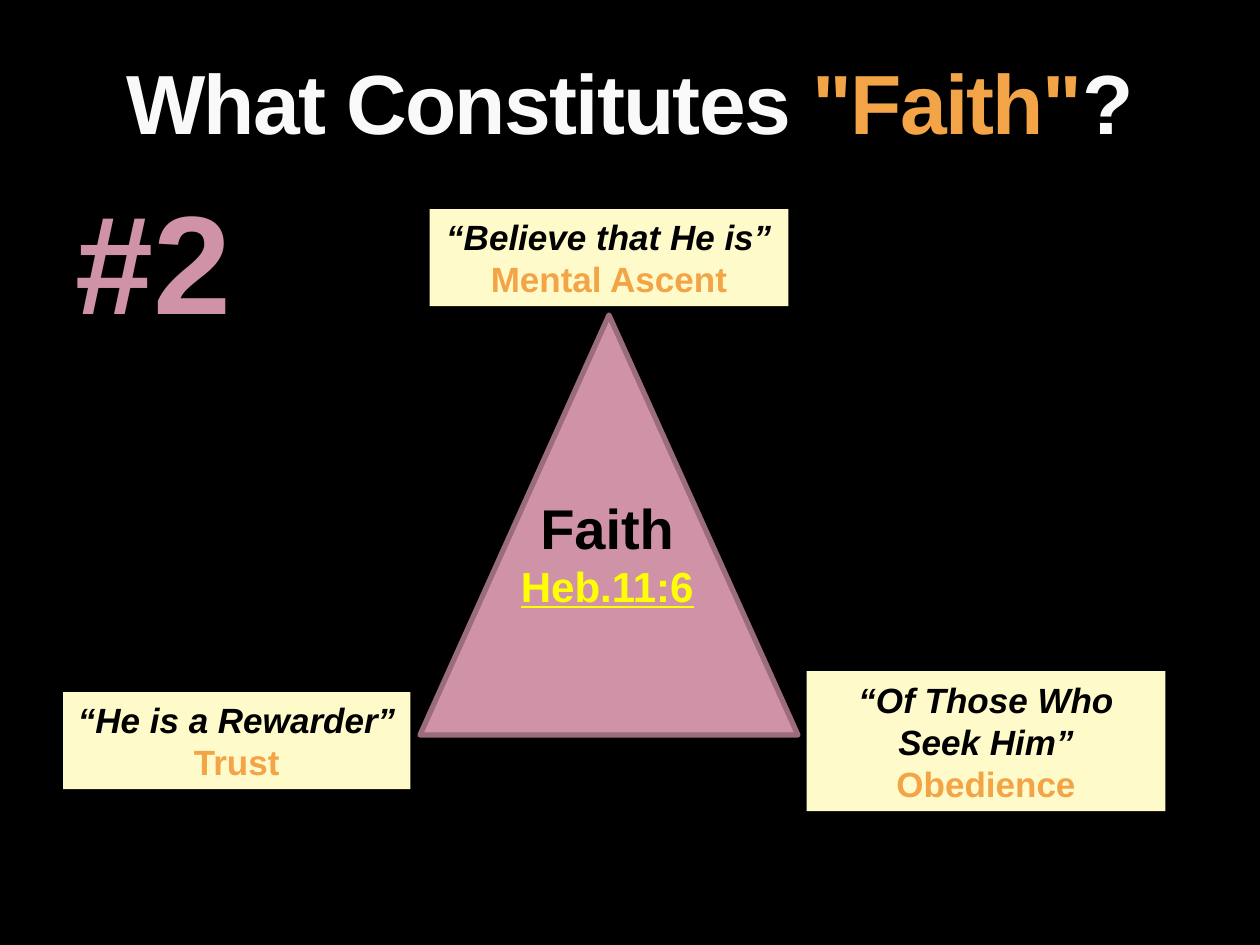
"""Build the slide on the three parts of faith around a triangle."""
from lxml.etree import SubElement
from pptx import Presentation
from pptx.dml.color import RGBColor
from pptx.enum.shapes import MSO_SHAPE
from pptx.enum.text import MSO_ANCHOR, MSO_AUTO_SIZE, PP_ALIGN
from pptx.oxml.ns import qn
from pptx.util import Pt

COLORS = {
    "background": "000000",
    "title": "F9F9F9",
    "accent": "F3A447",
    "rose": "D092A7",
    "rose_edge": "9A6C7C",
    "cream": "FEFAC9",
    "dark": "000000",
    "reference": "FFFF00",
}
BASE_FONT = {"name": "Arial", "bold": True}
QUOTE = {"size": Pt(20), "italic": True}
MEANING = {"size": Pt(20), "italic": False}
CORNERS = [
    ("“Believe that He is”", "Mental Ascent", (245.5, 119.5, 205, 55.5)),
    ("“He is a Rewarder”", "Trust", (36, 395.5, 198.5, 55.5)),
    ("“Of Those Who Seek Him”", "Obedience", (461, 383.5, 205, 80)),
]


def color(name):
    return RGBColor.from_string(COLORS[name])


def set_values(target, values):
    for attribute, value in values.items():
        setattr(target, attribute, value)


def place(shape, left, top, width, height):
    position = {"left": left, "top": top, "width": width, "height": height}
    set_values(shape, {side: Pt(length) for side, length in position.items()})


def add_run(paragraph, text, color_name, values):
    run = paragraph.add_run()
    run.text = text
    set_values(run.font, BASE_FONT | values)
    run.font.color.rgb = color(color_name)
    return run


def write_lines(text_frame, lines):
    for index, line in enumerate(lines):
        paragraph = text_frame.add_paragraph() if index else text_frame.paragraphs[0]
        paragraph.alignment = PP_ALIGN.CENTER
        add_run(paragraph, *line)


def add_title(slide):
    title = slide.shapes.title
    place(title, 36, 12, 648, 78)
    set_values(title.text_frame, {"vertical_anchor": MSO_ANCHOR.BOTTOM,
                                  "auto_size": MSO_AUTO_SIZE.NONE})
    paragraph = title.text_frame.paragraphs[0]
    paragraph.alignment = PP_ALIGN.CENTER
    parts = [("What Constitutes ", "title"), ('"Faith"', "accent"), ("?", "title")]
    for text, color_name in parts:
        run = add_run(paragraph, text, color_name, {"size": Pt(48)})
        run.font._element.set("spc", "-100")


def add_number(slide):
    body = slide.placeholders[1]
    place(body, 36, 96, 648, 384)
    body.text_frame.auto_size = MSO_AUTO_SIZE.NONE
    paragraph = body.text_frame.paragraphs[0]
    paragraph.space_before = Pt(6)
    properties = paragraph._p.get_or_add_pPr()
    set_indent = {"marL": "0", "indent": "0"}
    properties.attrib.update(set_indent)
    SubElement(properties, qn("a:buNone"))
    add_run(paragraph, "#2", "rose", {"size": Pt(80)})


def add_filled_shape(slide, kind, position, fill_name):
    shape = slide.shapes.add_shape(kind, *map(Pt, position))
    shape.shadow.inherit = False
    shape.fill.solid()
    shape.fill.fore_color.rgb = color(fill_name)
    shape.line.fill.background()
    return shape


def add_triangle(slide):
    triangle = add_filled_shape(slide, MSO_SHAPE.ISOSCELES_TRIANGLE,
                                (240, 180, 216, 240), "rose")
    triangle.line.color.rgb = color("rose_edge")
    triangle.line.width = Pt(3)


def add_center_label(slide):
    label = slide.shapes.add_textbox(*map(Pt, (290, 278.5, 114, 75)))
    label.text_frame.word_wrap = True
    write_lines(label.text_frame, [
        ("Faith", "dark", {"size": Pt(32)}),
        ("Heb.11:6", "reference", {"size": Pt(24), "underline": True}),
    ])


def add_corner(slide, quote, meaning, position):
    box = add_filled_shape(slide, MSO_SHAPE.RECTANGLE, position, "cream")
    set_values(box.text_frame, {"word_wrap": True,
                                "vertical_anchor": MSO_ANCHOR.MIDDLE})
    write_lines(box.text_frame, [(quote, "dark", QUOTE),
                                 (meaning, "accent", MEANING)])


def main():
    presentation = Presentation()
    set_values(presentation, {"slide_width": Pt(720), "slide_height": Pt(540)})
    slide = presentation.slides.add_slide(presentation.slide_layouts[1])
    slide.background.fill.solid()
    slide.background.fill.fore_color.rgb = color("background")
    add_number(slide)
    add_title(slide)
    add_triangle(slide)
    add_center_label(slide)
    for quote, meaning, position in CORNERS:
        add_corner(slide, quote, meaning, position)
    presentation.save("out.pptx")


if __name__ == "__main__":
    main()
